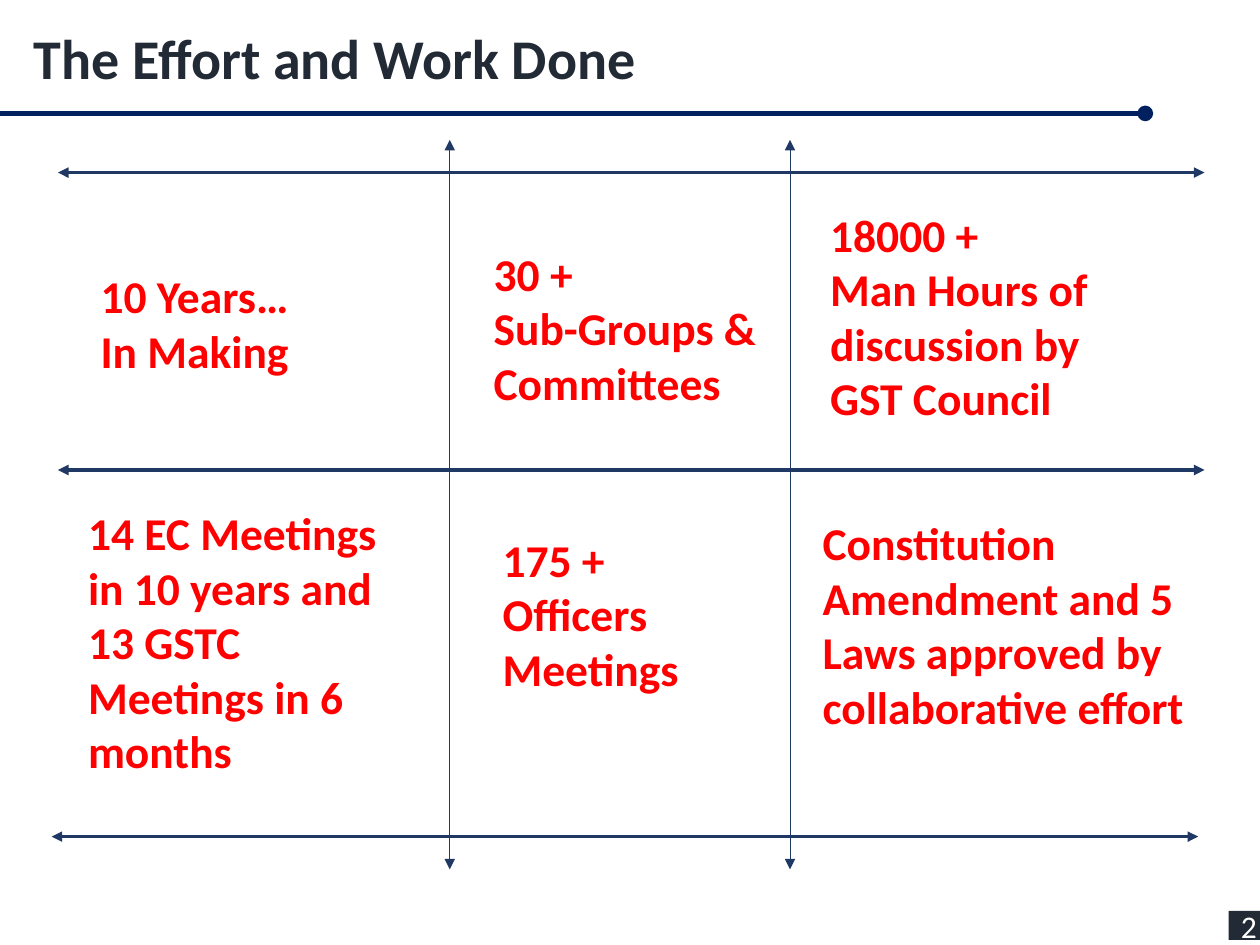
from lxml import etree
from pptx import Presentation
from pptx.dml.color import RGBColor
from pptx.enum.shapes import MSO_CONNECTOR, MSO_SHAPE
from pptx.enum.text import MSO_ANCHOR, MSO_AUTO_SIZE, PP_ALIGN
from pptx.oxml.ns import qn
from pptx.util import Inches, Pt

NAVY = RGBColor(0x00, 0x20, 0x60)
BLUE = RGBColor(0x20, 0x38, 0x64)
DARK = RGBColor(0x22, 0x2A, 0x35)
RED = RGBColor(0xFF, 0x00, 0x00)
WHITE = RGBColor(0xFF, 0xFF, 0xFF)


class SlideBuilder:
    font = "Calibri"

    def __init__(self, slide):
        self.s = slide

    def fill_text(self, tf, lines, size, color, bold=True, align=PP_ALIGN.LEFT):
        style = {"name": self.font, "size": Pt(size), "bold": bold}
        for i, line in enumerate(lines):
            p = tf.paragraphs[0] if i == 0 else tf.add_paragraph()
            p.alignment = align
            r = p.add_run()
            r.text = line
            for key, value in style.items():
                setattr(r.font, key, value)
            r.font.color.rgb = color

    def text(self, box, lines, size, color):
        tf = self.s.shapes.add_textbox(*map(Inches, box)).text_frame
        tf.word_wrap = True
        tf.auto_size = MSO_AUTO_SIZE.SHAPE_TO_FIT_TEXT
        self.fill_text(tf, lines, size, color)

    def line(self, x1, y1, x2, y2, color, width, head=None, tail=None):
        c = self.s.shapes.add_connector(
            MSO_CONNECTOR.STRAIGHT, *map(Inches, (x1, y1, x2, y2)))
        c.line.color.rgb = color
        c.line.width = Pt(width)
        ln = c._element.spPr.find(qn("a:ln"))
        for tag, kind in (("a:headEnd", head), ("a:tailEnd", tail)):
            if kind:
                etree.SubElement(ln, qn(tag), type=kind)
        etree.SubElement(c._element.spPr, qn("a:effectLst"))

    def page_number(self, box, number):
        sp = self.s.shapes.add_shape(MSO_SHAPE.RECTANGLE, *map(Inches, box))
        sp.shadow.inherit = False
        sp.fill.solid()
        sp.fill.fore_color.rgb = DARK
        sp.line.fill.background()
        tf = sp.text_frame
        tf.vertical_anchor = MSO_ANCHOR.MIDDLE
        self.fill_text(tf, [number], 18, WHITE, False, PP_ALIGN.CENTER)


def main():
    prs = Presentation()
    prs.slide_width, prs.slide_height = Inches(10), Inches(7.5)
    b = SlideBuilder(prs.slides.add_slide(prs.slide_layouts[6]))

    # Title and rule
    b.line(0, 0.9, 9.09, 0.9, NAVY, 3, tail="oval")
    b.text((0.17, 0.14, 8.31, 0.64), ["The Effort and Work Done"], 32, DARK)

    # Grid of double-headed arrows
    arrows = {"head": "triangle", "tail": "triangle"}
    for x, y in ((0.46, 1.37), (0.46, 3.73), (0.41, 6.64)):
        b.line(x, y, x + 9.1, y, BLUE, 2, **arrows)
    for x in (3.57, 6.27):
        b.line(x, 1.11, x, 6.9, BLUE, 0.5, **arrows)

    # Facts in the grid cells
    facts = [
        ((0.7, 2.08, 1.81, 0.98), ["10 Years…", "In Making"]),
        ((3.82, 1.9, 2.34, 1.41), ["30 +", "Sub-Groups & Committees"]),
        ((6.49, 1.59, 2.42, 1.85),
         ["18000 +", "Man Hours of discussion by GST Council"]),
        ((0.6, 3.96, 2.75, 2.29),
         ["14 EC Meetings in 10 years and 13 GSTC Meetings in 6 months"]),
        ((3.89, 4.17, 2.17, 1.41), ["175 + Officers Meetings"]),
        ((6.43, 4.04, 3.19, 1.85),
         ["Constitution Amendment and 5 Laws approved by collaborative effort"]),
    ]
    for box, lines in facts:
        b.text(box, lines, 26, RED)

    # Page number
    b.page_number((9.75, 7.23, 0.25, 0.23), "2")

    prs.save("out.pptx")


if __name__ == "__main__":
    main()
